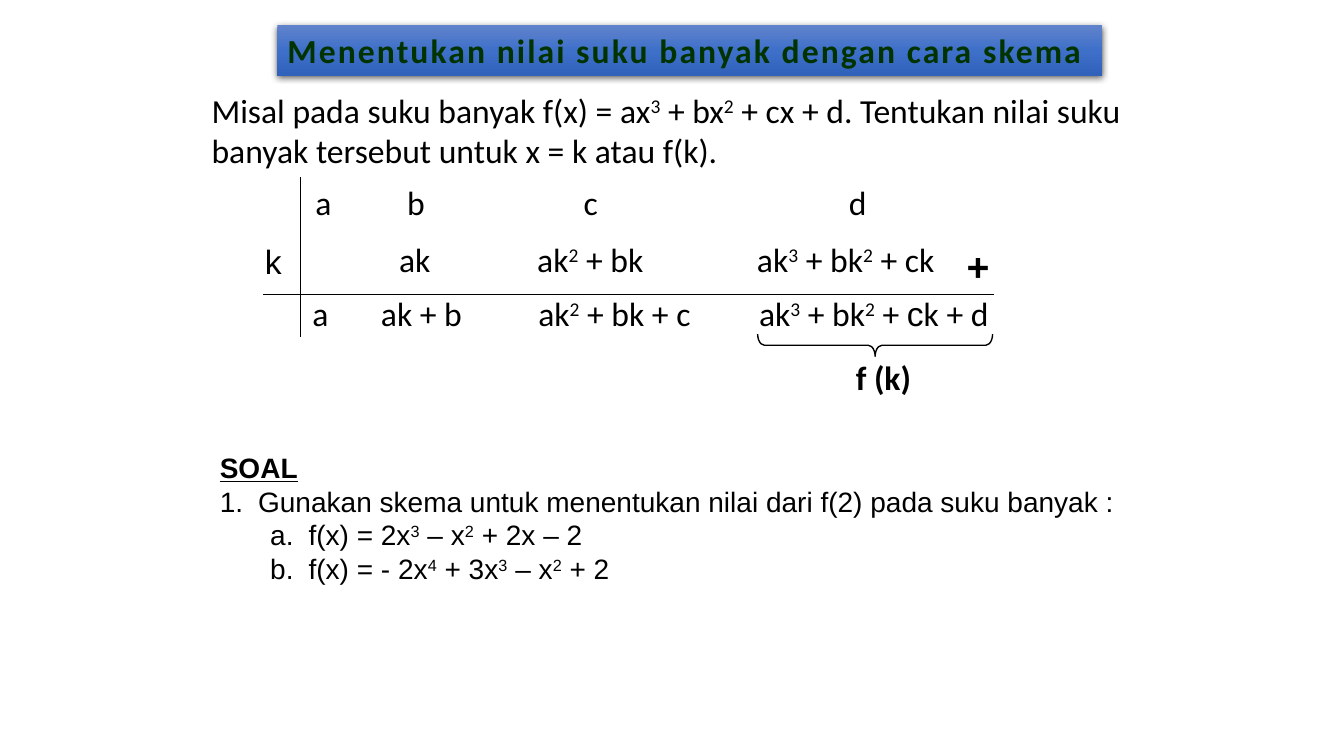
from lxml import etree
from pptx import Presentation
from pptx import util as u
from pptx.dml.color import RGBColor
from pptx.enum import shapes, text
from pptx.oxml import parse_xml
from pptx.oxml.ns import nsdecls, qn

BLACK = RGBColor(0, 0, 0)
GREEN = RGBColor(0, 0x33, 0)
GRADIENT = [(0, "6183CB"), (50, "3E70CA"), (100, "3062BB")]
CALIBRI, ARIAL = "Calibri", "Arial"

# "^" raises the next character; a tab moves to the next column.
TITLE = ("Menentukan nilai suku banyak dengan cara skema", (2.75, 0.25, 8.18, 0.5))
# segments, box, tab stops measured from the text edge, size, bold
LABELS = [
    ([("Misal pada suku banyak f(x) = ax^3 + bx^2 + cx + d. Tentukan nilai suku "
       "banyak tersebut untuk x = k atau f(k).", CALIBRI)],
     (2, 0.84, 9.42, 0.91), [], 24, False),
    ([("a\tb\tc\td", CALIBRI)], (3.03, 1.76, 5.91, 0.51), [0.91, 2.66, 5.29], 24, False),
    ([("ak\tak^2 + bk\tak^3 + bk^2 + ck", CALIBRI)],
     (3.86, 2.32, 6.67, 0.51), [1.37, 3.55], 24, False),
    ([("k", ARIAL)], (2.53, 2.34, 0.37, 0.51), [], 24, False),
    ([("a\tak + b\tak^2 + bk + c\tak^3 + bk^2 + ", CALIBRI), ("c", ARIAL), ("k + d", CALIBRI)],
     (3, 2.86, 8.08, 0.51), [0.68, 2.24, 4.43], 24, False),
    ([("+", ARIAL)], (9.49, 2.35, 0.43, 0.57), [], 28, True),
    ([("f (k)", CALIBRI)], (8.39, 3.49, 0.76, 0.51), [], 24, True),
]
SCHEME_LINES = [(2.61, 2.92, 9.86, 2.92), (2.98, 1.76, 2.98, 3.34)]
BRACE = (8.57, 2.26, 0.22, 2.33)
# text, level, left margin, numbering
QUESTIONS = [
    ("SOAL", 0, 0, None),
    ("Gunakan skema untuk menentukan nilai dari f(2) pada suku banyak :", 0, 0.38, "arabicPeriod"),
    ("f(x) = 2x^3 – x^2 + 2x – 2", 1, 0.88, "alphaLcPeriod"),
    ("f(x) = - 2x^4 + 3x^3 – x^2 + 2", 1, 0.88, "alphaLcPeriod"),
]
QUESTIONS_BOX = (2.08, 4.42, 9.33, 1.45)
HANGING = 0.38


def inches(values):
    return [u.Inches(v) for v in values]


def place(sp, box):
    sp.left, sp.top, sp.width, sp.height = inches(box)


def add_runs(p, markup, **fmt):
    def add(content, raised=False):
        if not content:
            return
        r = p.add_run()
        r.text = content
        r.font.color.rgb = fmt.get("color", BLACK)
        for name in ("name", "size", "bold", "underline"):
            setattr(r.font, name, fmt.get(name))
        if raised:
            r.font._element.set("baseline", "30000")

    first, *rest = markup.split("^")
    add(first)
    for piece in rest:
        add(piece[0], raised=True)
        add(piece[1:])


def add_title(sp, content, box):
    place(sp, box)
    stops = "".join(f'<a:gs pos="{pos * 1000}"><a:srgbClr val="{color}"/></a:gs>'
                    for pos, color in GRADIENT)
    sp._element.spPr.append(parse_xml(
        f'<a:gradFill {nsdecls("a")} rotWithShape="1"><a:gsLst>{stops}</a:gsLst>'
        '<a:lin ang="5400000" scaled="0"/></a:gradFill>'))
    sp._element.spPr.append(parse_xml(
        f'<a:effectLst {nsdecls("a")}><a:outerShdw blurRad="57150" dist="19050" dir="5400000" '
        'algn="ctr" rotWithShape="0"><a:srgbClr val="000000"><a:alpha val="63000"/></a:srgbClr>'
        '</a:outerShdw></a:effectLst>'))
    tf = sp.text_frame
    tf.word_wrap = True
    tf.auto_size = text.MSO_AUTO_SIZE.NONE
    tf.vertical_anchor = text.MSO_ANCHOR.TOP
    tf.margin_right = 0
    p = tf.paragraphs[0]
    p.alignment = text.PP_ALIGN.LEFT
    add_runs(p, content, name=CALIBRI, size=u.Pt(24), bold=True, color=GREEN)
    p.runs[0].font._element.set("spc", "150")


def add_label(slide, segments, box, tabs, size, bold):
    tf = slide.shapes.add_textbox(*inches(box)).text_frame
    tf.word_wrap = box[2] > 1
    tf.auto_size = text.MSO_AUTO_SIZE.SHAPE_TO_FIT_TEXT
    p = tf.paragraphs[0]
    if tabs:
        tab_list = etree.SubElement(p._p.get_or_add_pPr(), qn("a:tabLst"))
        for pos in tabs:
            etree.SubElement(tab_list, qn("a:tab"), pos=str(u.Inches(pos)), algn="l")
    for markup, font in segments:
        add_runs(p, markup, name=font, size=u.Pt(size), bold=bold)


def add_questions(sp):
    place(sp, QUESTIONS_BOX)
    tf = sp.text_frame
    tf.word_wrap = True
    tf.auto_size = text.MSO_AUTO_SIZE.NONE
    for i, (markup, level, margin, numbering) in enumerate(QUESTIONS):
        p = tf.add_paragraph() if i else tf.paragraphs[0]
        p.level = level
        p.space_before = u.Pt(0)
        pPr = p._p.get_or_add_pPr()
        pPr.set("marL", str(u.Inches(margin)))
        pPr.set("indent", str(-u.Inches(HANGING) if numbering else 0))
        if numbering:
            etree.SubElement(pPr, qn("a:buFont"), typeface=ARIAL)
            etree.SubElement(pPr, qn("a:buAutoNum"), type=numbering)
        else:
            etree.SubElement(pPr, qn("a:buNone"))
        heading = numbering is None
        add_runs(p, markup, name=ARIAL, size=u.Pt(20), bold=heading, underline=heading)


def add_scheme_lines(slide):
    for ends in SCHEME_LINES:
        line = slide.shapes.add_connector(shapes.MSO_CONNECTOR.STRAIGHT, *inches(ends))
        line.line.color.rgb = BLACK
        line.line.width = u.Pt(1)
        etree.SubElement(line._element.spPr, qn("a:effectLst"))
    brace = slide.shapes.add_shape(shapes.MSO_SHAPE.LEFT_BRACE, *inches(BRACE))
    brace.rotation = 270
    brace.adjustments[0] = 0.306
    brace.shadow.inherit = False
    brace.fill.background()
    brace.line.color.rgb = BLACK
    brace.line.width = u.Pt(1)


def main():
    prs = Presentation()
    prs.slide_width, prs.slide_height = inches((13.33, 7.5))
    slide = prs.slides.add_slide(prs.slide_layouts[1])
    add_title(slide.shapes.title, *TITLE)
    for label in LABELS:
        add_label(slide, *label)
    add_scheme_lines(slide)
    add_questions(slide.placeholders[1])
    prs.save("out.pptx")


if __name__ == "__main__":
    main()
